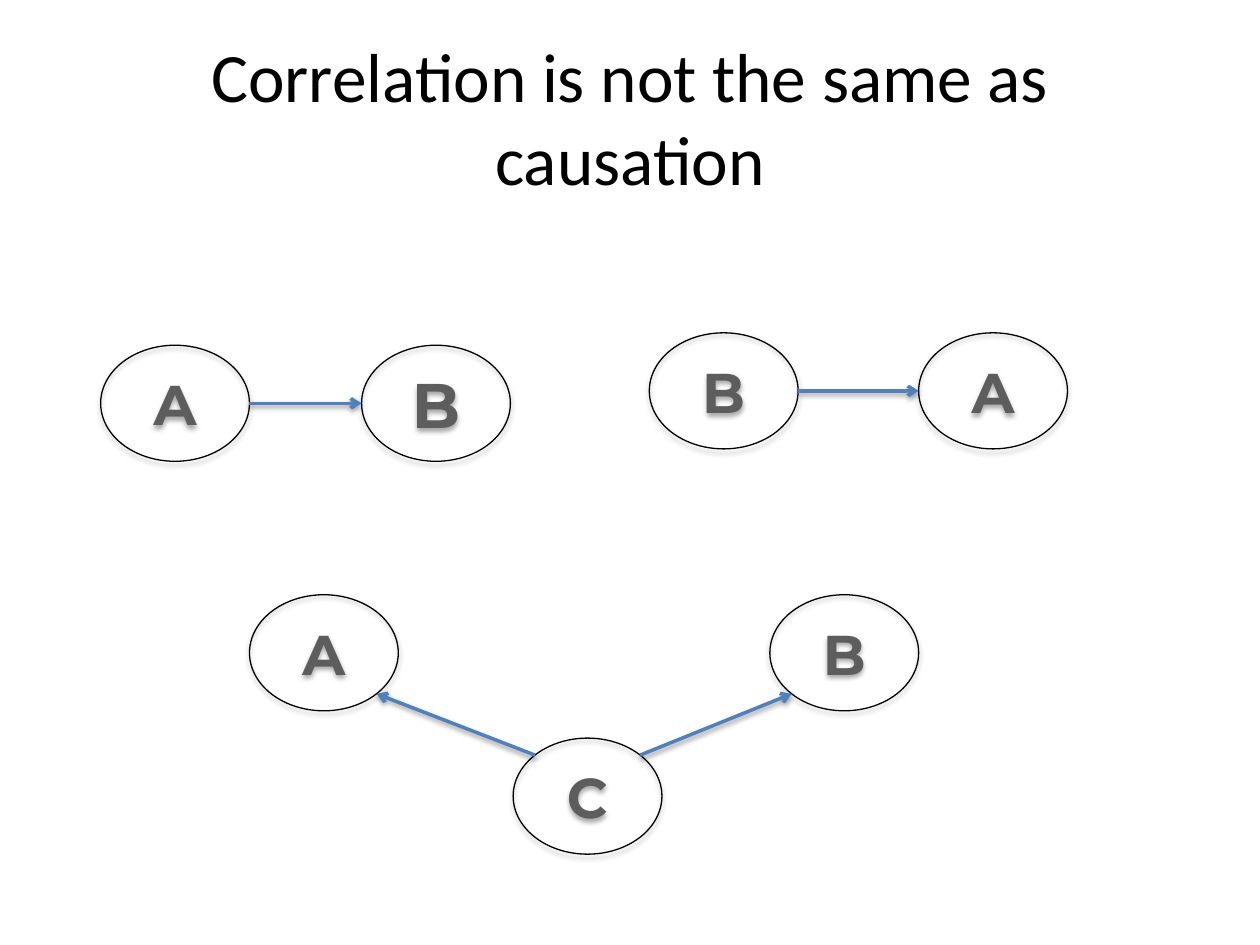
from lxml import etree
from pptx import Presentation
from pptx.dml.color import RGBColor
from pptx.enum.shapes import MSO_CONNECTOR, MSO_SHAPE
from pptx.enum.text import MSO_ANCHOR, MSO_AUTO_SIZE, PP_ALIGN
from pptx.oxml.ns import qn
from pptx.util import Cm, Pt

OVAL = MSO_SHAPE.OVAL
STRAIGHT = MSO_CONNECTOR.STRAIGHT
MIDDLE = MSO_ANCHOR.MIDDLE
NO_FIT = MSO_AUTO_SIZE.NONE
CENTER = PP_ALIGN.CENTER

BLACK = RGBColor(0x00, 0x00, 0x00)
GREY = RGBColor(0x5D, 0x5D, 0x5D)
BLUE = RGBColor(0x4F, 0x81, 0xBD)

NODE_WIDTH, NODE_HEIGHT = 3, 2.34
DIAGONAL = 0.5 ** 0.5
LEFT, RIGHT = (-1, 0), (1, 0)
UPPER_LEFT, UPPER_RIGHT = (-DIAGONAL, -DIAGONAL), (DIAGONAL, -DIAGONAL)
LOWER_LEFT, LOWER_RIGHT = (-DIAGONAL, DIAGONAL), (DIAGONAL, DIAGONAL)

TITLE_FONT = {"name": "Calibri", "size": Pt(39.6)}
NODE_FONT = {"name": "Montserrat", "bold": True}


def format_span(span, values, color):
    for name, value in values.items():
        setattr(span.font, name, value)
    span.font.color.rgb = color


def add_shadow(shape, distance, opacity):
    properties = shape._element.spPr
    effects = properties.find(qn("a:effectLst"))
    if effects is None:
        effects = etree.SubElement(properties, qn("a:effectLst"))
    shadow = etree.SubElement(
        effects, qn("a:outerShdw"), blurRad=str(Pt(3.1)), dist=str(Pt(distance)),
        dir="5400000", rotWithShape="0")
    color = etree.SubElement(shadow, qn("a:srgbClr"), val=str(BLACK))
    etree.SubElement(color, qn("a:alpha"), val=str(opacity * 1000))


def add_node(page, left, top, label, size=32):
    node = page.shapes.add_shape(
        OVAL, Cm(left), Cm(top), Cm(NODE_WIDTH), Cm(NODE_HEIGHT))
    node.fill.background()
    node.line.color.rgb = BLACK
    node.line.width = Pt(0.75)
    node.shadow.inherit = False
    add_shadow(node, 1.8, 35)
    node.text_frame.vertical_anchor = MIDDLE
    para = node.text_frame.paragraphs[0]
    para.alignment = CENTER
    span = para.add_run()
    span.text = label
    format_span(span, NODE_FONT | {"size": Pt(size)}, GREY)
    return node


def edge_point(node, direction):
    across, down = direction
    return (int(node.left + node.width * (1 + across) / 2),
            int(node.top + node.height * (1 + down) / 2))


def add_arrow(page, source, source_side, target, target_side):
    arrow = page.shapes.add_connector(
        STRAIGHT, *edge_point(source, source_side), *edge_point(target, target_side))
    arrow.line.color.rgb = BLUE
    arrow.line.width = Pt(2)
    etree.SubElement(arrow.line._get_or_add_ln(), qn("a:tailEnd"), type="arrow")
    add_shadow(arrow, 1.6, 38)


def add_title(page, box, text):
    title = page.shapes.title
    title.left, title.top, title.width, title.height = map(Cm, box)
    frame = title.text_frame
    for name, value in {"auto_size": NO_FIT, "word_wrap": True,
                        "vertical_anchor": MIDDLE}.items():
        setattr(frame, name, value)
    para = frame.paragraphs[0]
    para.alignment = CENTER
    span = para.add_run()
    span.text = text
    format_span(span, TITLE_FONT, BLACK)


def add_cause_pair(page, box, cause, effect, effect_size=32):
    left, top, width = box
    source = add_node(page, left, top, cause)
    target = add_node(page, left + width - NODE_WIDTH, top, effect, effect_size)
    add_arrow(page, source, RIGHT, target, LEFT)


def add_common_cause(page, box, cause, effects):
    left, top, width, height = box
    first = add_node(page, left, top, effects[0])
    second = add_node(page, left + width - NODE_WIDTH, top, effects[1])
    source = add_node(page, left + (width - NODE_WIDTH) / 2 + 0.07,
                      top + height - NODE_HEIGHT, cause)
    add_arrow(page, source, UPPER_LEFT, first, LOWER_RIGHT)
    add_arrow(page, source, UPPER_RIGHT, second, LOWER_LEFT)


def main():
    deck = Presentation()
    deck.slide_width, deck.slide_height = Cm(25.4), Cm(19.05)
    page = deck.slides.add_slide(deck.slide_layouts.get_by_name("Title Only"))
    add_title(page, (1.27, 0.76, 22.86, 3.18),
              "Correlation is not the same as causation")
    add_cause_pair(page, (2.03, 6.96, 8.26), "A", "B", effect_size=36)
    add_cause_pair(page, (13.09, 6.71, 8.43), "B", "A")
    add_common_cause(page, (5.03, 11.99, 13.49, 5.23), "C", ("A", "B"))
    deck.save("out.pptx")


if __name__ == "__main__":
    main()
